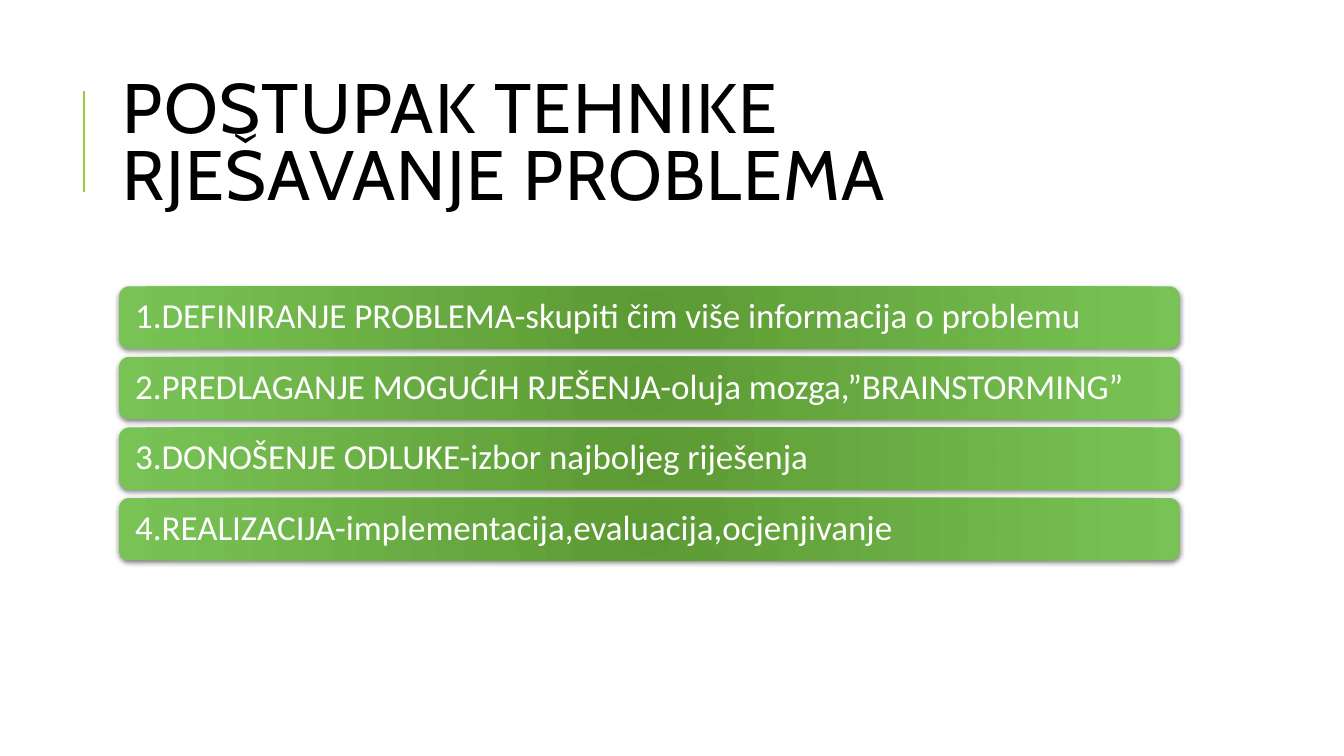
from lxml import etree
from pptx import Presentation
from pptx.dml.color import RGBColor
from pptx.enum.shapes import MSO_CONNECTOR, MSO_SHAPE
from pptx.enum.text import MSO_ANCHOR, PP_ALIGN
from pptx.oxml import parse_xml
from pptx.oxml.ns import qn
from pptx.util import Inches, Pt

LINE = MSO_CONNECTOR.STRAIGHT
ROUNDED = MSO_SHAPE.ROUNDED_RECTANGLE
MIDDLE = MSO_ANCHOR.MIDDLE
LEFT = PP_ALIGN.LEFT

COLORS = {"accent": "99CB38", "dark": "5C9A33", "light": "79C356",
          "title": "000000", "step": "FFFFFF", "shadow": "000000"}
NS = 'xmlns:a="http://schemas.openxmlformats.org/drawingml/2006/main"'
RADIAL = (f'<a:path {NS} path="circle"><a:fillToRect l="100000" t="100000" '
          'r="100000" b="100000"/></a:path>')
SHADOW = (f'<a:outerShdw {NS} blurRad="50800" dist="12700" dir="5400000" '
          f'rotWithShape="0"><a:srgbClr val="{COLORS["shadow"]}">'
          '<a:alpha val="50000"/></a:srgbClr></a:outerShdw>')

STEPS = [
    "1.DEFINIRANJE PROBLEMA-skupiti čim više informacija o problemu",
    "2.PREDLAGANJE MOGUĆIH RJEŠENJA-oluja mozga,”BRAINSTORMING”",
    "3.DONOŠENJE ODLUKE-izbor najboljeg riješenja",
    "4.REALIZACIJA-implementacija,evaluacija,ocjenjivanje",
]
STEP_TOP, STEP_PITCH = 2.84, 0.7


def write(sp, text, font, size, color, spacing, left=0.1, right=0.1, track=0):
    tf = sp.text_frame
    tf.word_wrap = True
    tf.vertical_anchor = MIDDLE
    tf.margin_left, tf.margin_right = Inches(left), Inches(right)
    tf.margin_top = tf.margin_bottom = Inches(0.05)
    p = tf.paragraphs[0]
    p.alignment = LEFT
    p.line_spacing = spacing
    r = p.add_run()
    r.text = text
    r.font.name = font
    r.font.size = Pt(size)
    r.font.color.rgb = RGBColor.from_string(COLORS[color])
    if track:
        r.font._element.set("spc", str(track * 100))


prs = Presentation()
prs.slide_width, prs.slide_height = Inches(13.33), Inches(7.5)
slide = prs.slides.add_slide(prs.slide_layouts[6])

rule = slide.shapes.add_connector(LINE, Inches(0.83), Inches(1.9),
                                  Inches(0.83), Inches(0.9))
rule.line.color.rgb = RGBColor.from_string(COLORS["accent"])
rule.line.width = Pt(1.5)
etree.SubElement(rule._element.spPr, qn("a:effectLst"))

title = slide.shapes.add_textbox(Inches(1.12), Inches(0.64),
                                 Inches(10.63), Inches(1.64))
write(title, "POSTUPAK TEHNIKE RJEŠAVANJE PROBLEMA", "Cabin", 50, "title", 0.8,
      right=0.4, track=1)

for i, step in enumerate(STEPS):
    sp = slide.shapes.add_shape(ROUNDED, Inches(1.18),
                                Inches(STEP_TOP + i * STEP_PITCH),
                                Inches(10.52), Inches(0.62))
    sp.line.fill.background()
    sp.fill.gradient()
    for stop, name, position in zip(sp.fill.gradient_stops, ("dark", "light"), (0, 1)):
        stop.color.rgb = RGBColor.from_string(COLORS[name])
        stop.position = position
    grad = sp._element.spPr.find(qn("a:gradFill"))
    grad.replace(grad.find(qn("a:lin")), parse_xml(RADIAL))
    sp.shadow.inherit = False
    sp._element.spPr.find(qn("a:effectLst")).append(parse_xml(SHADOW))
    write(sp, step, "Calibri", 25, "step", 0.9, left=0.13, right=0.13)

prs.save("out.pptx")
